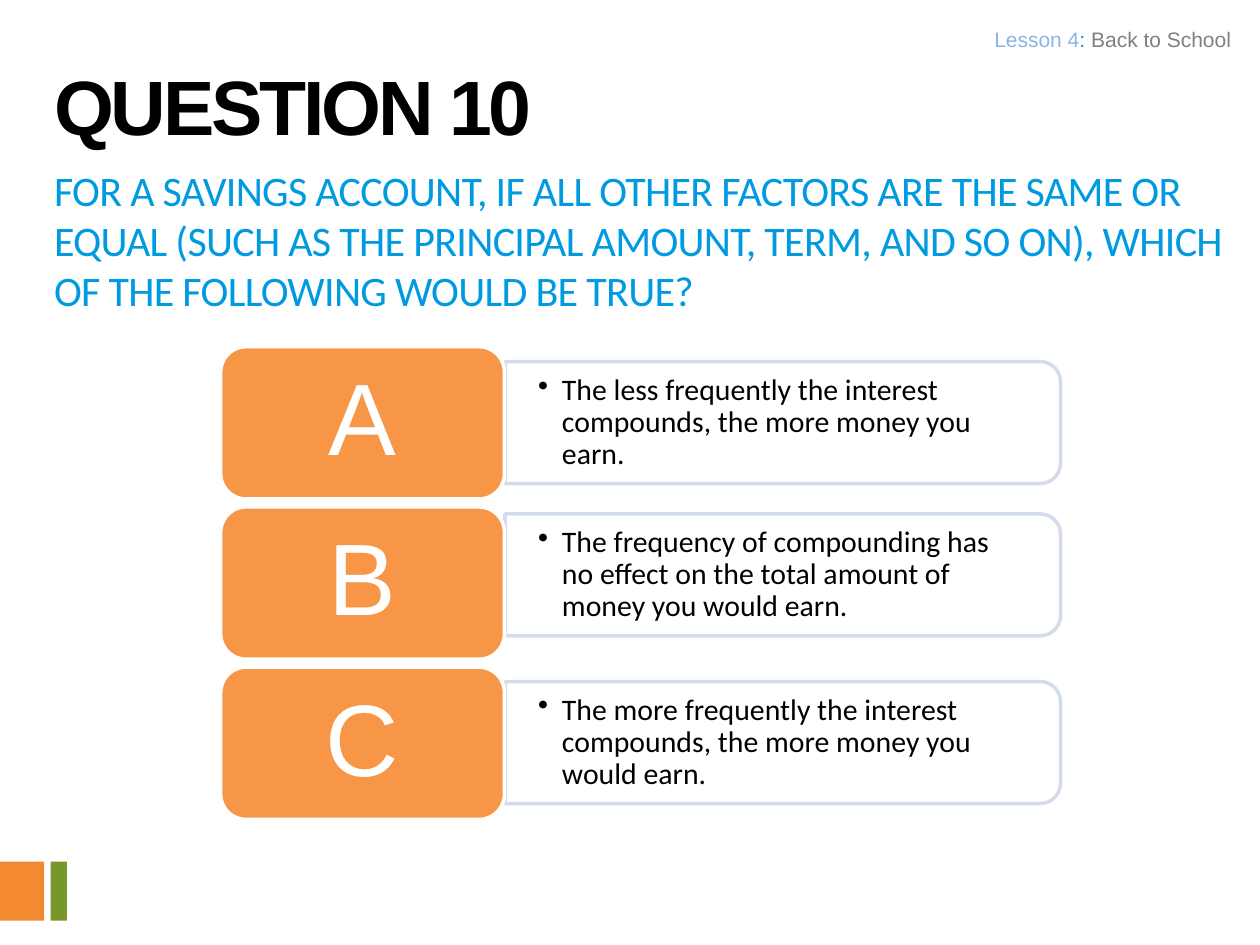
from dataclasses import dataclass

from lxml import etree
from pptx import Presentation
from pptx.dml.color import RGBColor
from pptx.enum.shapes import MSO_SHAPE
from pptx.enum.text import MSO_ANCHOR, PP_ALIGN
from pptx.oxml.ns import qn
from pptx.util import Cm, Pt

RECTANGLE = MSO_SHAPE.RECTANGLE
ROUNDED = MSO_SHAPE.ROUNDED_RECTANGLE
TOP_ROUNDED = MSO_SHAPE.ROUND_2_SAME_RECTANGLE
TOP, MIDDLE = MSO_ANCHOR.TOP, MSO_ANCHOR.MIDDLE
LEFT, CENTER, RIGHT = PP_ALIGN.LEFT, PP_ALIGN.CENTER, PP_ALIGN.RIGHT


@dataclass(frozen=True)
class Theme:
    heading_font: str = "Arial"
    body_font: str = "Calibri"
    title_size: float = 44
    question_size: float = 24
    answer_size: float = 17
    letter_size: float = 58
    header_size: float = 12
    outline: float = 2
    black: str = "000000"
    white: str = "FFFFFF"
    blue: str = "009AE1"
    pale_blue: str = "8EB4E3"
    gray: str = "808080"
    badge: str = "F79646"
    panel_line: str = "D0D8E8"
    footer_orange: str = "F38A31"
    footer_green: str = "77972B"


class QuizPage:
    def __init__(self, page, theme):
        self.page = page
        self.theme = theme

    def shape(self, kind, left, top, width, height, fill, line=None):
        shape = self.page.shapes.add_shape(kind, Cm(left), Cm(top), Cm(width), Cm(height))
        shape.shadow.inherit = False
        shape.fill.solid()
        shape.fill.fore_color.rgb = RGBColor.from_string(fill)
        if line:
            shape.line.color.rgb = RGBColor.from_string(line)
            shape.line.width = Pt(self.theme.outline)
        else:
            shape.line.fill.background()
        return shape

    def text(self, left, top, width, height, spans, font, size, align=LEFT,
             anchor=TOP, inset=(0.25, 0.13), spacing=None, bold=False, tracking=None):
        box = self.page.shapes.add_textbox(Cm(left), Cm(top), Cm(width), Cm(height))
        frame = box.text_frame
        frame.word_wrap = True
        frame.vertical_anchor = anchor
        frame.margin_left = frame.margin_right = Cm(inset[0])
        frame.margin_top = frame.margin_bottom = Cm(inset[1])
        para = frame.paragraphs[0]
        para.alignment = align
        if spacing:
            para.line_spacing = spacing
        for words, color in spans:
            span = para.add_run()
            span.text = words
            span.font.color.rgb = RGBColor.from_string(color)
            if tracking:
                span.font._element.set("spc", str(round(tracking * 100)))
        para.font.name = font
        para.font.size = Pt(size)
        para.font.bold = bold
        return para

    def panel(self, left, top, width, height):
        theme = self.theme
        panel = self.shape(TOP_ROUNDED, left + (width - height) / 2, top + (height - width) / 2,
                           height, width, theme.white, theme.panel_line)
        panel.rotation = 90
        for color in panel._element.spPr.iter(qn("a:srgbClr")):
            etree.SubElement(color, qn("a:alpha"), val="90000")

    def bullet(self, left, top, width, height, words):
        theme = self.theme
        para = self.text(left, top, width, height, [(words, theme.black)], theme.body_font,
                         theme.answer_size, anchor=MIDDLE, inset=(0.69, 0.36), spacing=0.9)
        para.level = 1
        properties = para._p.get_or_add_pPr()
        properties.set("marL", str(Cm(0.48)))
        properties.set("indent", str(-Cm(0.48)))
        mark = etree.Element(qn("a:buChar"), char="•")
        properties.find(qn("a:lnSpc")).addnext(mark)

    def badge(self, left, top, width, height, letter):
        theme = self.theme
        self.shape(ROUNDED, left, top, width, height, theme.badge, theme.white)
        edge = 0.15
        self.text(left + edge, top + edge, width - 2 * edge, height - 2 * edge,
                  [(letter, theme.white)], theme.heading_font, theme.letter_size,
                  CENTER, MIDDLE, (0.61, 0.3), 0.9)


def main():
    theme = Theme()
    deck = Presentation()
    deck.slide_width, deck.slide_height = Cm(25.4), Cm(19.05)
    quiz = QuizPage(deck.slides.add_slide(deck.slide_layouts[6]), theme)

    quiz.shape(RECTANGLE, 0, 17.37, 0.89, 1.19, theme.footer_orange)
    quiz.shape(RECTANGLE, 1.02, 17.37, 0.33, 1.19, theme.footer_green)

    question = ("FOR A SAVINGS ACCOUNT, IF ALL OTHER FACTORS ARE THE SAME OR EQUAL "
                "(SUCH AS THE PRINCIPAL AMOUNT, TERM, AND SO ON), "
                "WHICH OF THE FOLLOWING WOULD BE TRUE?")
    quiz.text(0.84, 3.18, 24.13, 3.3, [(question, theme.blue)], theme.body_font,
              theme.question_size, tracking=-0.4)

    answers = [
        ("A", 7.29, "The less frequently the interest compounds, the more money you earn."),
        ("B", 10.36, "The frequency of compounding has no effect on the total amount "
                     "of money you would earn."),
        ("C", 13.74, "The more frequently the interest compounds, "
                     "the more money you would earn."),
    ]
    for row, (letter, panel_top, answer) in enumerate(answers):
        quiz.panel(10.18, panel_top, 11.2, 2.46)
        quiz.bullet(10.16, panel_top + 0.13, 11.1, 2.21, answer)
        quiz.badge(4.45, 6.99 + 3.23 * row, 5.72, 3.07, letter)

    header = [("Lesson 4", theme.pale_blue), (": ", theme.blue), ("Back to School", theme.gray)]
    quiz.text(10.16, 0.43, 14.86, 0.81, header, theme.heading_font, theme.header_size,
              RIGHT, inset=(0.2, 0.1))
    quiz.text(0.84, 0.84, 22, 2.11, [("QUESTION 10", theme.black)], theme.heading_font,
              theme.title_size, spacing=Pt(59), bold=True, tracking=-1.8)

    deck.save("out.pptx")


if __name__ == "__main__":
    main()
